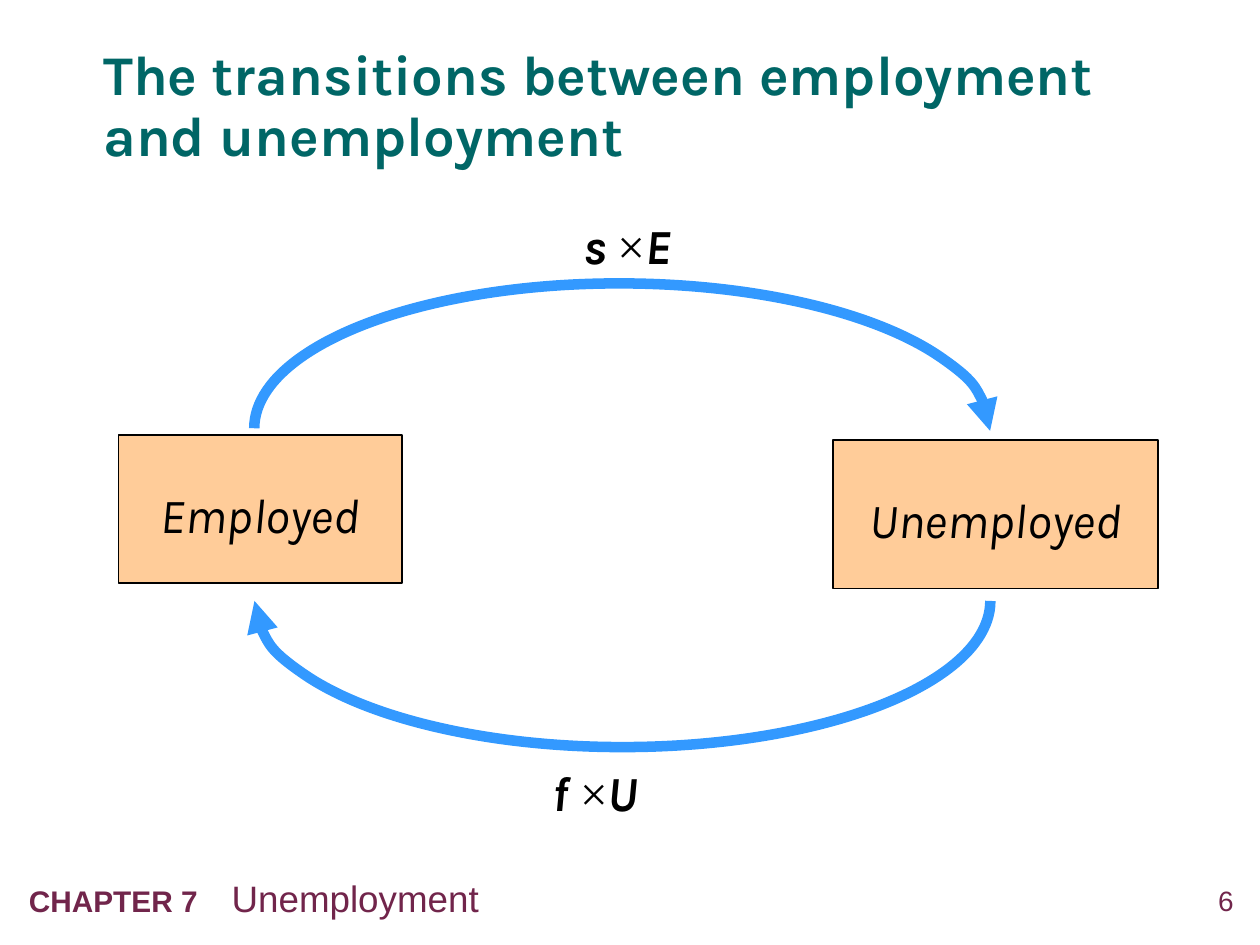
from pptx import Presentation
from pptx.dml.color import RGBColor
from pptx.enum.shapes import MSO_SHAPE
from pptx.enum.text import MSO_ANCHOR, PP_ALIGN
from pptx.oxml.ns import qn
from pptx.util import Inches, Pt
from lxml import etree

RECT, ARC = MSO_SHAPE.RECTANGLE, MSO_SHAPE.LEFT_BRACKET
TOP, MID = MSO_ANCHOR.TOP, MSO_ANCHOR.MIDDLE
LEFT, MIDDLE, RIGHT = PP_ALIGN.LEFT, PP_ALIGN.CENTER, PP_ALIGN.RIGHT
WIDE, HIGH = Inches(10), Inches(7.5)
COL, ROW = WIDE // 100, HIGH // 75
INK = {"plum": "71254B", "teal": "006666", "peach": "FFCC99",
       "black": "000000", "blue": "3399FF"}


def tint(name):
    """Return the named colour."""
    return RGBColor.from_string(INK[name])


def span(box):
    """Turn left, top, width and height in columns and rows into lengths."""
    x, y, w, h = box
    return round(x * COL), round(y * ROW), round(w * COL), round(h * ROW)


def write(shape, text, size=28, font="Karla", ink="black", bold=False,
          ital=False, align=LEFT, anchor=TOP, pad=(1, 0.5), lead=1.0):
    """Write text, or (text, changes) pairs, into a shape."""
    frame = shape.text_frame
    frame.word_wrap, frame.vertical_anchor = True, anchor
    frame.margin_left = frame.margin_right = round(pad[0] * COL)
    frame.margin_top = frame.margin_bottom = round(pad[1] * ROW)
    para = frame.paragraphs[0]
    para.alignment, para.line_spacing = align, lead
    base = dict(size=size, font=font, bold=bold, ital=ital)
    for part, diff in [(text, {})] if isinstance(text, str) else text:
        look = {**base, **diff}
        run = para.add_run()
        run.text = part
        run.font.size, run.font.name = Pt(look["size"]), look["font"]
        run.font.bold, run.font.italic = look["bold"], look["ital"]
        run.font.color.rgb = tint(ink)
    return para


def label(slide, box, text, **look):
    """Add a text box."""
    return write(slide.shapes.add_textbox(*span(box)), text, **look)


def state(slide, box, text):
    """Add a box for one state of the labour force."""
    shape = slide.shapes.add_shape(RECT, *span(box))
    shape.shadow.inherit = False
    shape.fill.solid()
    shape.fill.fore_color.rgb = tint("peach")
    shape.line.color.rgb, shape.line.width = tint("black"), Pt(1)
    write(shape, text, ital=True, align=MIDDLE, pad=(1, 3), lead=1.2)


def flow(slide, box, turn):
    """Add a curved arrow, turned by the given angle."""
    shape = slide.shapes.add_shape(ARC, *span(box))
    shape.shadow.inherit = False
    shape.adjustments[0] = 2.513
    shape.rotation = turn
    shape.fill.background()
    shape.line.color.rgb, shape.line.width = tint("blue"), Pt(6)
    props = shape._element.spPr
    props.find(qn("a:xfrm")).set("flipV", "1")
    etree.SubElement(props.find(qn("a:ln")), qn("a:headEnd"), type="triangle")


def rate(slide, box, share, stock):
    """Add the product that names a flow."""
    sign = dict(font="Times New Roman", bold=False, ital=False)
    label(slide, box, [(share + " ", {}), ("×", sign), (stock, {})],
          bold=True, ital=True)


def foot(slide, box, page):
    """Add the chapter line and the page number."""
    look = dict(font="Arial", ink="plum")
    para = label(slide, box, [("CHAPTER 7\t", dict(size=17, bold=True)),
                              ("Unemployment", {})], size=21, **look)
    tabs = etree.SubElement(para._p.get_or_add_pPr(), qn("a:tabLst"))
    etree.SubElement(tabs, qn("a:tab"), pos=str(round(16.1 * COL)), algn="l")
    label(slide, page, "6", size=16, align=RIGHT, pad=(0, 0), **look)


def main():
    """Build the slide."""
    deck = Presentation()
    deck.slide_width, deck.slide_height = WIDE, HIGH
    slide = deck.slides.add_slide(deck.slide_layouts[6])
    foot(slide, (1.3, 69, 81.8, 4.5), (92.4, 70.1, 5.5, 3.2))
    label(slide, (8.2, 2.6, 84.2, 11.9),
          "The transitions between employment and unemployment", size=32,
          ink="teal", bold=True, anchor=MID, pad=(0, 0), lead=0.9)
    state(slide, (9.4, 34.5, 22.5, 11.8), "Employed")
    state(slide, (66.1, 34.9, 25.8, 11.8), "Unemployed")
    rate(slide, (45.3, 16.6, 10.8, 5.7), "s", "E")
    flow(slide, (43.6, -0.9, 11.6, 58.4), 90.2)
    rate(slide, (42.9, 60, 10.8, 5.7), "f", "U")
    flow(slide, (43.6, 24.3, 11.6, 58.4), 270)
    deck.save("out.pptx")


if __name__ == "__main__":
    main()
